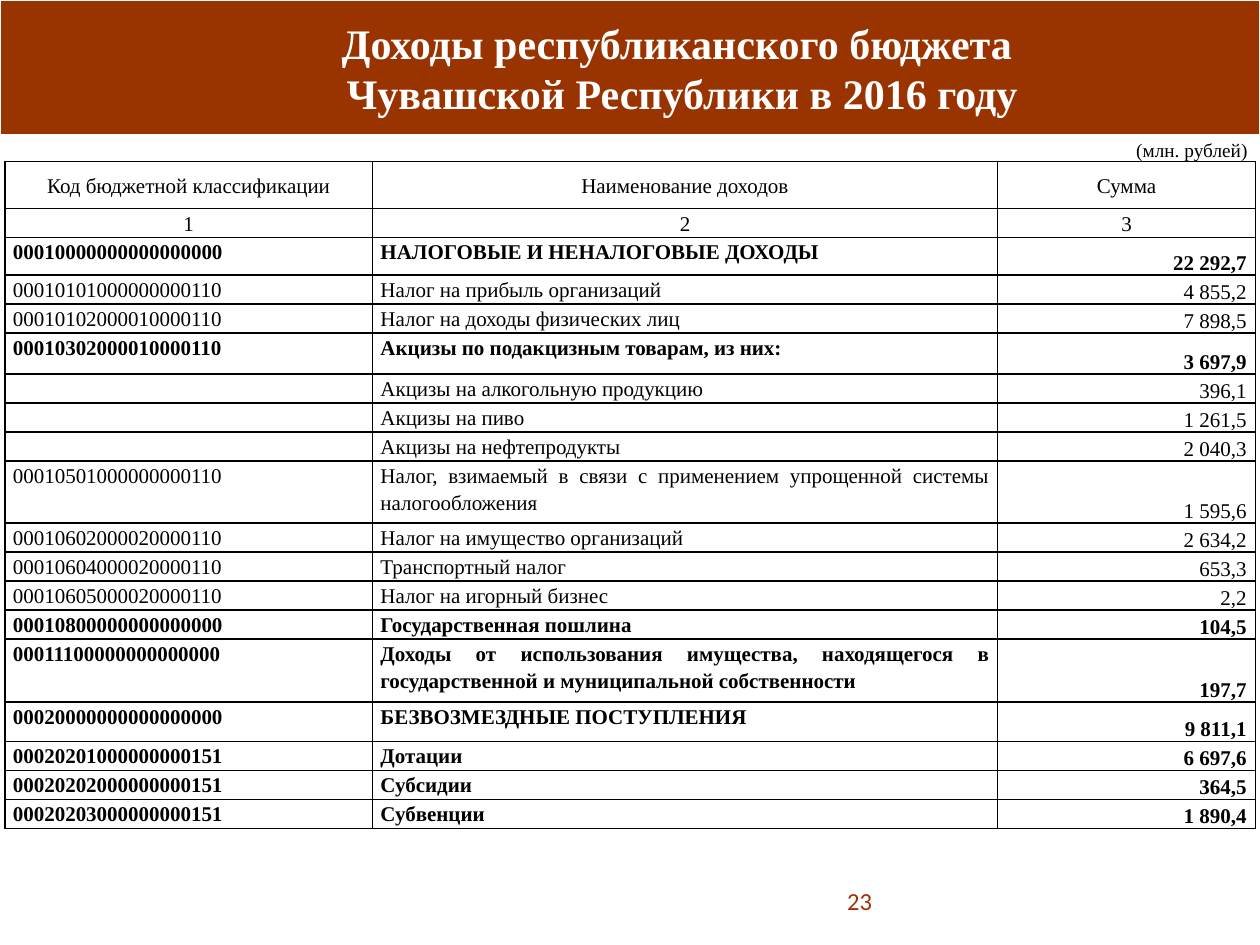
from lxml import etree
from pptx import Presentation
from pptx.dml.color import RGBColor
from pptx.enum.shapes import MSO_SHAPE
from pptx.enum.text import MSO_ANCHOR, PP_ALIGN
from pptx.oxml.ns import qn
from pptx.util import Cm, Pt

LEFT, CENTER, RIGHT, JUSTIFY = PP_ALIGN.LEFT, PP_ALIGN.CENTER, PP_ALIGN.RIGHT, PP_ALIGN.JUSTIFY
TOP, MIDDLE, BOTTOM = MSO_ANCHOR.TOP, MSO_ANCHOR.MIDDLE, MSO_ANCHOR.BOTTOM
BROWN = RGBColor(0x99, 0x33, 0x00)
RUST = RGBColor(0xA0, 0x32, 0x02)
WHITE = RGBColor(0xFF, 0xFF, 0xFF)
BLACK = RGBColor(0x00, 0x00, 0x00)
SERIF = "Times New Roman"

TITLE = "Доходы республиканского бюджета \vЧувашской Республики в 2016 году"
UNITS = "(млн. рублей)"
PAGE_NUMBER = "23"
HEADINGS = [
    ("Код бюджетной классификации", "Наименование доходов", "Сумма"),
    ("1", "2", "3"),
]
INCOME = [
    ("00010000000000000000", "НАЛОГОВЫЕ И НЕНАЛОГОВЫЕ ДОХОДЫ", "22 292,7"),
    ("00010101000000000110", "Налог на прибыль организаций", "4 855,2"),
    ("00010102000010000110", "Налог на доходы физических лиц", "7 898,5"),
    ("00010302000010000110", "Акцизы по подакцизным товарам, из них:", "3 697,9"),
    ("", "Акцизы на алкогольную продукцию", "396,1"),
    ("", "Акцизы на пиво", "1 261,5"),
    ("", "Акцизы на нефтепродукты", "2 040,3"),
    ("00010501000000000110",
     "Налог, взимаемый в связи с применением упрощенной системы налогообложения", "1 595,6"),
    ("00010602000020000110", "Налог на имущество организаций", "2 634,2"),
    ("00010604000020000110", "Транспортный налог", "653,3"),
    ("00010605000020000110", "Налог на игорный бизнес", "2,2"),
    ("00010800000000000000", "Государственная пошлина", "104,5"),
    ("00011100000000000000",
     "Доходы от использования имущества, находящегося в государственной "
     "и муниципальной собственности", "197,7"),
    ("00020000000000000000", "БЕЗВОЗМЕЗДНЫЕ ПОСТУПЛЕНИЯ", "9 811,1"),
    ("00020201000000000151", "Дотации", "6 697,6"),
    ("00020202000000000151", "Субсидии", "364,5"),
    ("00020203000000000151", "Субвенции", "1 890,4"),
]
BOLD_INCOME = {0, 3, *range(11, 17)}
COLUMN_WIDTHS = [7.41, 12.6, 5.2]
ROW_HEIGHT = 0.54
SPECIAL_HEIGHTS = {0: 0.51, 1: 0.95, 3: 0.75, 6: 0.83, 10: 1.25, 15: 1.27, 16: 0.79}
BAND_HEIGHT = 2.72


def write_text(frame, text, size=12, font=SERIF, color=BLACK, bold=False,
               align=LEFT, spacing=None):
    frame.word_wrap = True
    paragraph = frame.paragraphs[0]
    paragraph.text = text
    paragraph.alignment = align
    paragraph.line_spacing = spacing
    for run in paragraph.runs:
        run.font.size = Pt(size)
        run.font.name = font
        run.font.bold = bold
        run.font.color.rgb = color
    if not text:
        etree.SubElement(paragraph._p, qn("a:endParaRPr"), sz=str(size * 100))


def set_borders(cell, sides):
    properties = cell._tc.get_or_add_tcPr()
    for side in "LRTB":
        line = etree.SubElement(properties, qn(f"a:ln{side}"), w=str(Pt(1)))
        if side in sides:
            fill = etree.SubElement(line, qn("a:solidFill"))
            etree.SubElement(fill, qn("a:srgbClr"), val=str(BLACK))
        else:
            etree.SubElement(line, qn("a:noFill"))


def fill_cell(cell, text, sides="LRTB", anchor=TOP, margin=0.16, **text_format):
    cell.margin_left = cell.margin_right = Cm(margin)
    cell.margin_top = cell.margin_bottom = 0
    cell.vertical_anchor = anchor
    set_borders(cell, sides)
    cell.fill.background()
    write_text(cell.text_frame, text, spacing=1.15, **text_format)


def add_text_box(slide, left, top, width, height, text, **text_format):
    box = slide.shapes.add_textbox(Cm(left), Cm(top), Cm(width), Cm(height))
    box.text_frame.vertical_anchor = MIDDLE
    write_text(box.text_frame, text, **text_format)


def add_income_table(slide):
    row_count = 1 + len(HEADINGS) + len(INCOME)
    heights = [SPECIAL_HEIGHTS.get(row, ROW_HEIGHT) for row in range(row_count)]
    table = slide.shapes.add_table(
        row_count, len(COLUMN_WIDTHS), Cm(0.1), Cm(BAND_HEIGHT),
        Cm(sum(COLUMN_WIDTHS)), Cm(sum(heights))).table
    table.first_row = table.horz_banding = False
    for column, width in zip(table.columns, COLUMN_WIDTHS):
        column.width = Cm(width)
    for row, height in zip(table.rows, heights):
        row.height = Cm(height)

    table.cell(0, 1).merge(table.cell(0, 2))
    for column, text in enumerate(("", UNITS, "")):
        fill_cell(table.cell(0, column), text, sides="B", anchor=BOTTOM,
                  size=11, align=RIGHT)
    for row, headings in enumerate(HEADINGS, 1):
        for column, text in enumerate(headings):
            fill_cell(table.cell(row, column), text, anchor=MIDDLE, align=CENTER)
    for index, (code, name, amount) in enumerate(INCOME):
        row = index + 1 + len(HEADINGS)
        bold = index in BOLD_INCOME
        fill_cell(table.cell(row, 0), code, bold=bold)
        fill_cell(table.cell(row, 1), name, bold=bold, align=JUSTIFY)
        fill_cell(table.cell(row, 2), amount, bold=bold, align=RIGHT,
                  anchor=BOTTOM, margin=0.18)


def main():
    presentation = Presentation()
    presentation.slide_width, presentation.slide_height = Cm(25.4), Cm(19.05)
    slide = presentation.slides.add_slide(presentation.slide_layouts[6])
    band = slide.shapes.add_shape(MSO_SHAPE.RECTANGLE, 0, 0, Cm(25.4), Cm(BAND_HEIGHT))
    band.shadow.inherit = False
    band.fill.solid()
    band.fill.fore_color.rgb = BROWN
    band.line.color.rgb = WHITE
    band.line.width = Pt(0.75)
    add_text_box(slide, 2.1, 0, 23.3, BAND_HEIGHT, TITLE,
                 size=24, color=WHITE, bold=True, align=CENTER)
    add_income_table(slide)
    add_text_box(slide, 14.91, 17.65, 2.92, 1.02, PAGE_NUMBER,
                 size=14, font="Calibri", color=RUST, align=RIGHT)
    presentation.save("out.pptx")


if __name__ == "__main__":
    main()
